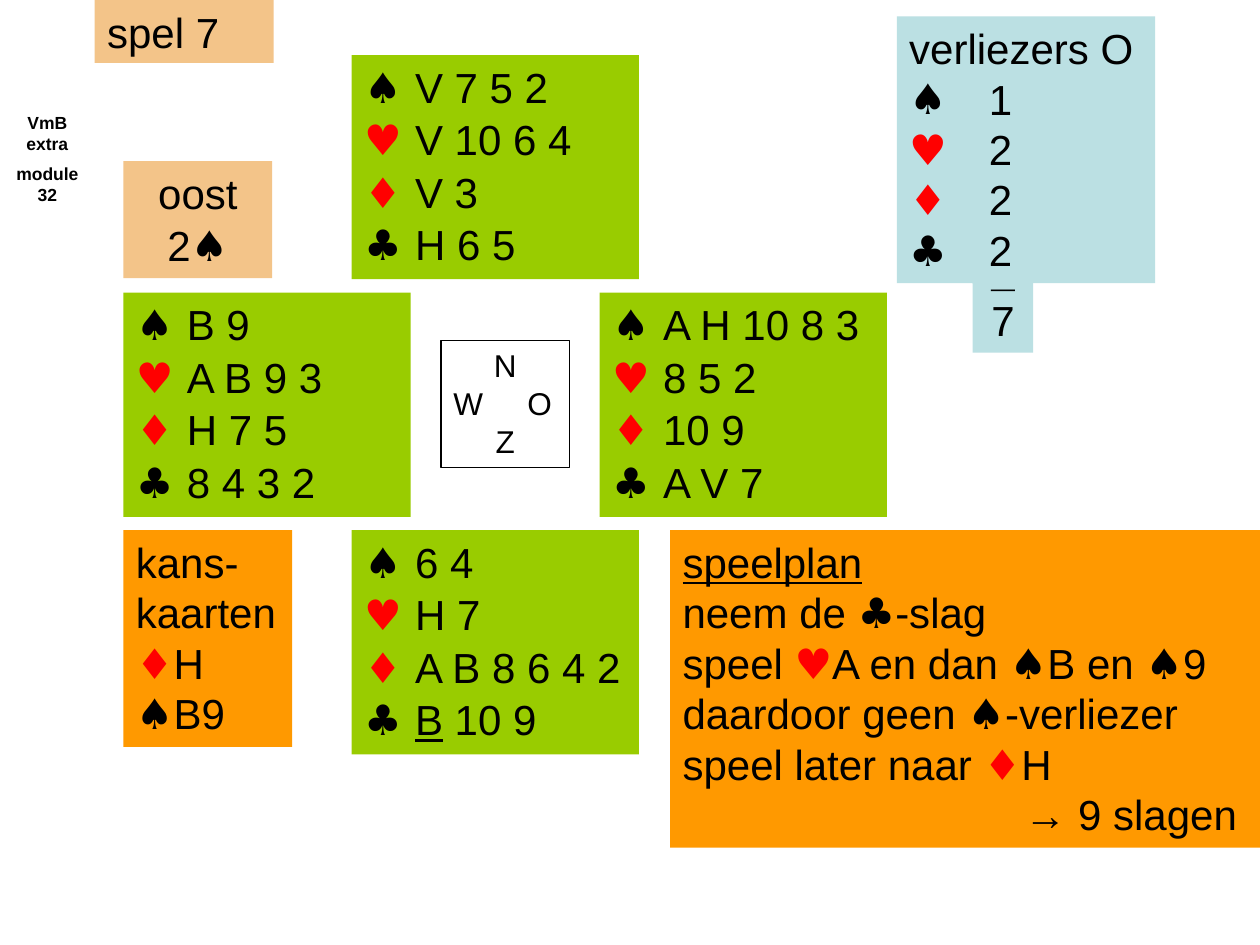
from itertools import groupby

from lxml.etree import SubElement
from pptx import Presentation
from pptx.dml.color import RGBColor
from pptx.enum.shapes import MSO_SHAPE as Preset
from pptx.enum.text import MSO_ANCHOR as Anchor, MSO_AUTO_SIZE as AutoSize, PP_ALIGN as Align
from pptx.oxml.ns import qn
from pptx.util import Cm, Pt

SUITS = "♠♥♦♣"
RED_SUITS = "♥♦"
BLACK, RED = "000000", "FF0000"
GREEN, ORANGE, SAND, BLUE = "99CC00", "FF9900", "F3C489", "BBE0E3"
COLUMN_LEFT = {"west": 2.49, "middle": 7.09, "east": 12.09}
ROW_TOP = [1.11 + 4.79 * row for row in range(3)]
HANDS = [
    ("middle", 0, ["V 7 5 2", "V 10 6 4", "V 3", "H 6 5"]),
    ("east", 1, ["A H 10 8 3", "8 5 2", "10 9", "A V 7"]),
    ("west", 1, ["B 9", "A B 9 3", "H 7 5", "8 4 3 2"]),
    ("middle", 2, ["6 4", "H 7", "A B 8 6 4 2", "[B] 10 9"]),
]


def color(value):
    """Turn a hex string into a colour."""
    return RGBColor.from_string(value)


def apply_format(target, values):
    """Set every named attribute on the target."""
    for name, value in values.items():
        setattr(target, name, value)


def split_runs(text):
    """Split text into (characters, suit, underlined) pieces; brackets mark underlining."""
    marked, suit, underlined = [], "", False
    for character in text:
        if character in "[]":
            underlined = character == "["
            suit = ""
            continue
        if character in SUITS:
            suit = character
        elif character != " ":
            suit = ""
        marked.append((character, suit, underlined))
    for (suit, underlined), group in groupby(marked, key=lambda item: item[1:]):
        yield "".join(item[0] for item in group), suit, underlined


def add_runs(paragraph, text, size, bold):
    """Write text with suit symbols in their own font and colour."""
    for characters, suit, underlined in split_runs(text):
        run = paragraph.add_run()
        run.text = characters
        apply_format(run.font, {
            "name": "DejaVu Sans" if suit else "Arial",
            "size": Pt(size),
            "bold": bold,
            "underline": underlined,
        })
        run.font.color.rgb = color(RED if suit and suit in RED_SUITS else BLACK)


def fill_text(shape, lines, size=24, bold=False, align=Align.LEFT, gap=0):
    """Write lines, each a string or a (string, overrides) pair."""
    frame = shape.text_frame
    apply_format(frame, {
        "word_wrap": True,
        "auto_size": AutoSize.SHAPE_TO_FIT_TEXT,
        "vertical_anchor": Anchor.TOP,
    })
    for index, line in enumerate(lines):
        text, own = line if isinstance(line, tuple) else (line, {})
        paragraph = frame.paragraphs[0] if index == 0 else frame.add_paragraph()
        if "tab" in own:
            tabs = SubElement(paragraph._p.get_or_add_pPr(), qn("a:tabLst"))
            SubElement(tabs, qn("a:tab"), pos=str(Cm(own["tab"])), algn="l")
        apply_format(paragraph, {
            "alignment": own.get("align", align),
            "space_before": Pt(own.get("gap", gap) if index else 0),
        })
        add_runs(paragraph, text, size, own.get("bold", bold))


def add_panel(slide, box, lines, fill=None, line=None, **text_format):
    """Add a rectangle with text."""
    shape = slide.shapes.add_shape(Preset.RECTANGLE, *map(Cm, box))
    shape.shadow.inherit = False
    if fill:
        shape.fill.solid()
        shape.fill.fore_color.rgb = color(fill)
    else:
        shape.fill.background()
    if line:
        shape.line.color.rgb = color(line)
        shape.line.width = Pt(0.75)
    else:
        shape.line.fill.background()
    fill_text(shape, lines, **text_format)


def add_label(slide, box, lines, **text_format):
    """Add a plain text box."""
    fill_text(slide.shapes.add_textbox(*map(Cm, box)), lines, **text_format)


def add_hand(slide, column, row, holdings):
    """Add one player's cards, a line for each suit."""
    lines = [f"{suit} {cards}" for suit, cards in zip(SUITS, holdings)]
    box = (COLUMN_LEFT[column], ROW_TOP[row], 5.79, 4.52)
    add_panel(slide, box, lines, GREEN, gap=1.2)


def main():
    """Build the bridge deal slide."""
    presentation = Presentation()
    presentation.slide_width, presentation.slide_height = Cm(25.4), Cm(19.05)
    slide = presentation.slides.add_slide(presentation.slide_layouts[6])
    west, bottom = COLUMN_LEFT["west"], ROW_TOP[2]

    add_panel(slide, (19.61, 4.8, 1.22, 2.31), [("_", {"bold": True}), "7"],
              BLUE, align=Align.CENTER)
    add_panel(slide, (8.89, 6.86, 2.59, 2.57),
              ["N", ("W\tO", {"align": Align.LEFT, "tab": 1.49}), "Z"],
              line=BLACK, size=18, align=Align.CENTER)
    for hand in HANDS:
        add_hand(slide, *hand)
    add_panel(slide, (1.91, 0, 3.61, 1.27), ["spel 7"], SAND)
    add_panel(slide, (west, 3.25, 3, 2.36), ["oost", "2♠"], SAND, align=Align.CENTER, gap=1.2)
    add_panel(slide, (18.08, 0.33, 5.21, 5.38), ["verliezers O", *SUITS], BLUE)
    add_panel(slide, (19.61, 1.35, 1.12, 4.37), ["1", "2", "2", "2"], BLUE, align=Align.CENTER)
    add_panel(slide, (13.51, bottom, 11.91, 6.4), [
        "[speelplan]",
        "neem de ♣-slag",
        "speel ♥A en dan ♠B en ♠9",
        "daardoor geen ♠-verliezer",
        "speel later naar ♦H",
        ("→ 9 slagen ", {"align": Align.RIGHT}),
    ], ORANGE)
    add_panel(slide, (west, bottom, 3.4, 4.37), ["kans-", "kaarten", "♦H", "♠B9"], ORANGE)
    add_label(slide, (0, 2.13, 1.91, 2.18), ["VmB", "extra", ("module 32", {"gap": 5})],
              size=10, bold=True, align=Align.CENTER)

    presentation.save("out.pptx")


if __name__ == "__main__":
    main()
